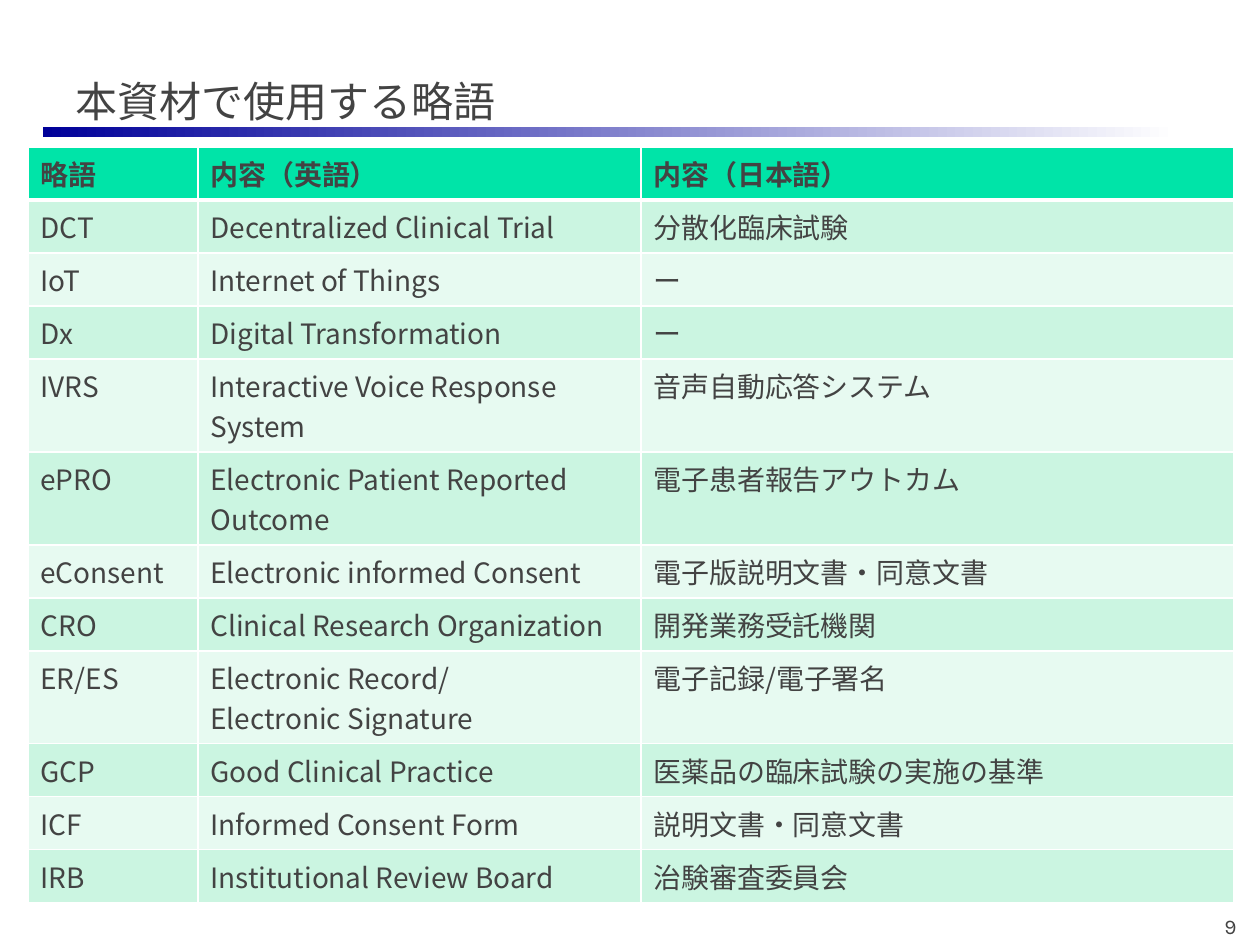
from lxml import etree
from pptx import Presentation
from pptx.dml.color import RGBColor
from pptx.enum.shapes import MSO_SHAPE
from pptx.enum.text import MSO_ANCHOR, PP_ALIGN
from pptx.oxml.ns import qn
from pptx.util import Pt

RECT = MSO_SHAPE.RECTANGLE
BOTTOM = MSO_ANCHOR.BOTTOM
LEFT, RIGHT = PP_ALIGN.LEFT, PP_ALIGN.RIGHT

TITLE = "本資材で使用する略語"
PAGE = "9"
ROWS = [
    ("略語", "内容（英語）", "内容（日本語）"),
    ("DCT", "Decentralized Clinical Trial", "分散化臨床試験"),
    ("IoT", "Internet of Things", "ー"),
    ("Dx", "Digital Transformation", "ー"),
    ("IVRS", "Interactive Voice Response System", "音声自動応答システム"),
    ("ePRO", "Electronic Patient Reported Outcome", "電子患者報告アウトカム"),
    ("eConsent", "Electronic informed Consent", "電子版説明文書・同意文書"),
    ("CRO", "Clinical Research Organization", "開発業務受託機関"),
    ("ER/ES", "Electronic Record/\nElectronic Signature", "電子記録/電子署名"),
    ("GCP", "Good Clinical Practice", "医薬品の臨床試験の実施の基準"),
    ("ICF", "Informed Consent Form", "説明文書・同意文書"),
    ("IRB", "Institutional Review Board", "治験審査委員会"),
]
TALL = {"IVRS", "ePRO", "ER/ES"}
COLS = [170, 443, 593]
LOW, HIGH = 53, 93
HEAD, BANDS = "00E4A8", ("CBF5E1", "E7FAF1")
INK, WHITE, NAVY = "434343", "FFFFFF", "000099"
SANS, KARLA = "Noto Sans CJK JP", "Karla"


def px(n):
    return round(n * 914400 / 126)


def rgb(code):
    return RGBColor.from_string(code)


def style(frame, size, face=SANS, bold=False, align=LEFT):
    look = {"size": Pt(size), "name": face, "bold": bold}
    for para in frame.paragraphs:
        para.alignment = align
        for run in para.runs:
            for key, value in look.items():
                setattr(run.font, key, value)
            run.font.color.rgb = rgb(INK)
            east = etree.SubElement(run.font._element, qn("a:ea"))
            east.set("typeface", face)


def label(slide, text, box, size, **look):
    frame = slide.shapes.add_textbox(*map(px, box)).text_frame
    frame.word_wrap = True
    frame.vertical_anchor = BOTTOM
    frame.text = text
    style(frame, size, **look)


def edge(cell, widths):
    """Draw white borders; widths maps each side, in L R T B order, to points."""
    props = cell._tc.get_or_add_tcPr()
    for spot, (side, width) in enumerate(widths.items()):
        line = etree.Element(qn("a:ln" + side), w=str(Pt(width)))
        fill = etree.SubElement(line, qn("a:solidFill"))
        etree.SubElement(fill, qn("a:srgbClr"), val=WHITE)
        props.insert(spot, line)


def rule(slide):
    bar = slide.shapes.add_shape(RECT, *map(px, (43, 127, 1134, 10)))
    bar.shadow.inherit = False
    bar.line.fill.background()
    bar.fill.gradient()
    bar.fill.gradient_angle = 0
    for stop, code, spot in zip(bar.fill.gradient_stops, (NAVY, WHITE), (0, 1)):
        stop.color.rgb = rgb(code)
        stop.position = spot


def grid(slide):
    tall = [HIGH if row[0] in TALL else LOW for row in ROWS]
    box = (28, 147, sum(COLS), sum(tall))
    table = slide.shapes.add_table(len(ROWS), len(COLS), *map(px, box)).table
    for col, wide in zip(table.columns, COLS):
        col.width = px(wide)
    for i, row in enumerate(ROWS):
        table.rows[i].height = px(tall[i])
        for j, text in enumerate(row):
            cell = table.cell(i, j)
            cell.text = text
            style(cell.text_frame, 16, bold=i == 0)
            cell.fill.solid()
            cell.fill.fore_color.rgb = rgb(BANDS[(i - 1) % 2] if i else HEAD)
            edge(cell, {"L": 1, "R": 1, "T": 3 if i == 1 else 1, "B": 1 if i else 3})


def main():
    deck = Presentation()
    deck.slide_width, deck.slide_height = px(1260), px(945)
    slide = deck.slides.add_slide(deck.slide_layouts[6])
    rule(slide)
    label(slide, PAGE, (987, 903, 262, 42), 12, face=KARLA, align=RIGHT)
    grid(slide)
    label(slide, TITLE, (63, 21, 1074, 111), 24)
    deck.save("out.pptx")


if __name__ == "__main__":
    main()
